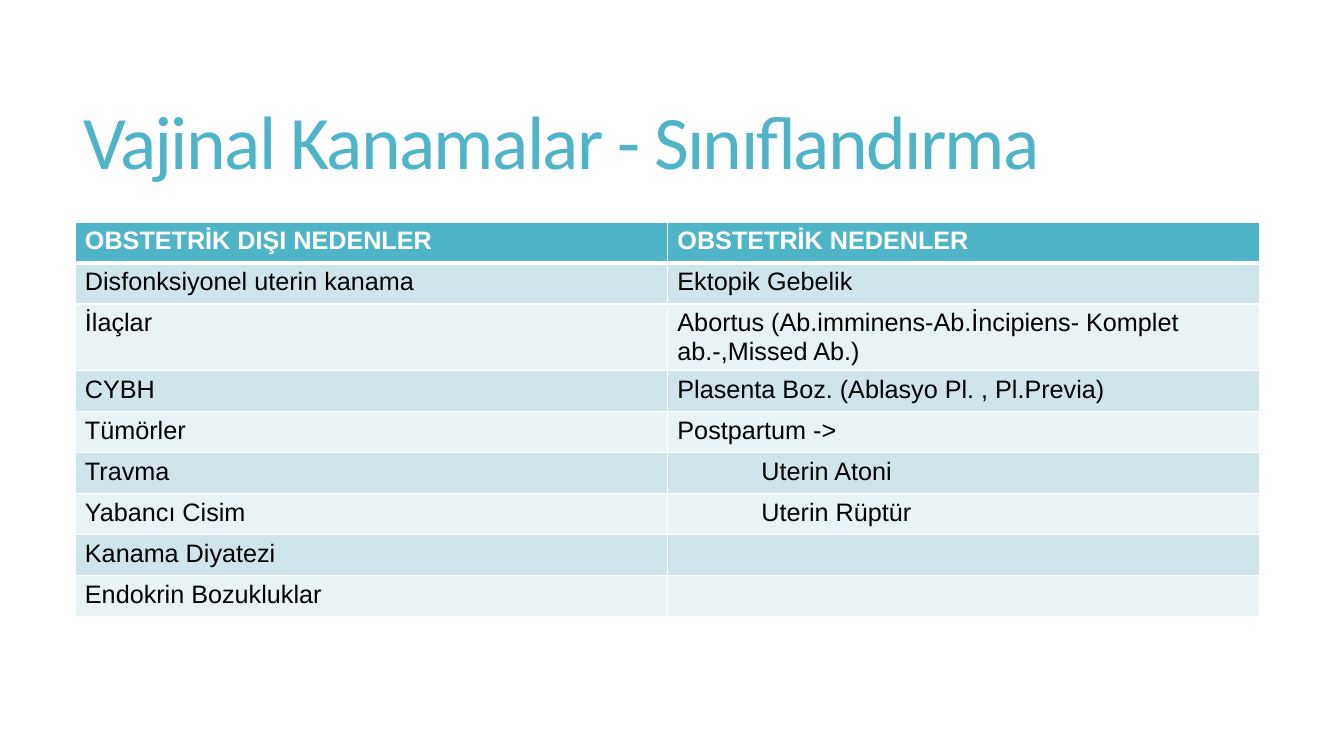
import pptx
import pptx.dml.color
import pptx.enum.text
import pptx.oxml
import pptx.oxml.ns
import pptx.util

PX = 914400 / 100.8
TEAL, WHITE, BLACK = "50B4C8", "FFFFFF", "000000"
BANDS = ["E9F2F5", "D0E5EB"]
INDENT = 84
INDENTED = {"Uterin Atoni", "Uterin Rüptür"}
ROWS = [
    ("OBSTETRİK DIŞI NEDENLER", "OBSTETRİK NEDENLER"),
    ("Disfonksiyonel uterin kanama", "Ektopik Gebelik"),
    ("İlaçlar", "Abortus (Ab.imminens-Ab.İncipiens- Komplet ab.-,Missed Ab.)"),
    ("CYBH", "Plasenta Boz. (Ablasyo Pl. , Pl.Previa)"),
    ("Tümörler", "Postpartum ->"),
    ("Travma", "Uterin Atoni"),
    ("Yabancı Cisim", "Uterin Rüptür"),
    ("Kanama Diyatezi", ""),
    ("Endokrin Bozukluklar", ""),
]


def px(n):
    """Turn pixels into EMU."""
    return pptx.util.Emu(round(n * PX))


def rgb(value):
    """Turn a hex string into a colour."""
    return pptx.dml.color.RGBColor.from_string(value)


def add_run(p, text, font, size, color, bold=False):
    """Add one formatted run to a paragraph."""
    r = p.add_run()
    r.text = text
    r.font.name = font
    r.font.size = pptx.util.Pt(size)
    r.font.bold = bold
    r.font.color.rgb = rgb(color)
    return r


def set_borders(cell, **widths):
    """Draw white cell borders of the given widths in points."""
    tc_pr = cell._tc.get_or_add_tcPr()
    for side, width in widths.items():
        tc_pr.append(pptx.oxml.parse_xml(
            f'<a:ln{side} {pptx.oxml.ns.nsdecls("a")} w="{pptx.util.Pt(width)}">'
            f'<a:solidFill><a:srgbClr val="{WHITE}"/></a:solidFill></a:ln{side}>'))


def fill_title(s, x, y, w, h):
    """Place and write the slide title."""
    sp = s.shapes.title
    sp.left, sp.top, sp.width, sp.height = px(x), px(y), px(w), px(h)
    tf = sp.text_frame
    tf.word_wrap = True
    tf.auto_size = pptx.enum.text.MSO_AUTO_SIZE.NONE
    tf.vertical_anchor = pptx.enum.text.MSO_ANCHOR.MIDDLE
    p = tf.paragraphs[0]
    p.alignment = pptx.enum.text.PP_ALIGN.LEFT
    p.line_spacing = 0.85
    r = add_run(p, "Vajinal Kanamalar - Sınıflandırma", "Calibri", 54, TEAL)
    r.font._element.set("spc", "-120")


def add_causes_table(s, x, y, w, row_h):
    """Add the two-column table of bleeding causes."""
    cols = len(ROWS[0])
    table = s.shapes.add_table(len(ROWS), cols, px(x), px(y), px(w),
                               px(row_h * len(ROWS))).table
    for row in table.rows:
        row.height = px(row_h)
    for i, texts in enumerate(ROWS):
        header = i == 0
        for j, text in enumerate(texts):
            cell = table.cell(i, j)
            set_borders(cell, L=1, R=1, T=3 if i == 1 else 1, B=3 if header else 1)
            cell.fill.solid()
            cell.fill.fore_color.rgb = rgb(TEAL if header else BANDS[i % 2])
            cell.margin_left = px(10 + INDENT * (text in INDENTED))
            if text:
                add_run(cell.text_frame.paragraphs[0], text, "Arial", 18,
                        WHITE if header else BLACK, header)


def main():
    """Build and save the slide."""
    prs = pptx.Presentation()
    prs.slide_width, prs.slide_height = px(1344), px(756)
    s = prs.slides.add_slide(prs.slide_layouts[5])
    fill_title(s, 73, 55, 1187, 182)
    add_causes_table(s, 75, 222, 1185, 41)
    prs.save("out.pptx")


if __name__ == "__main__":
    main()
